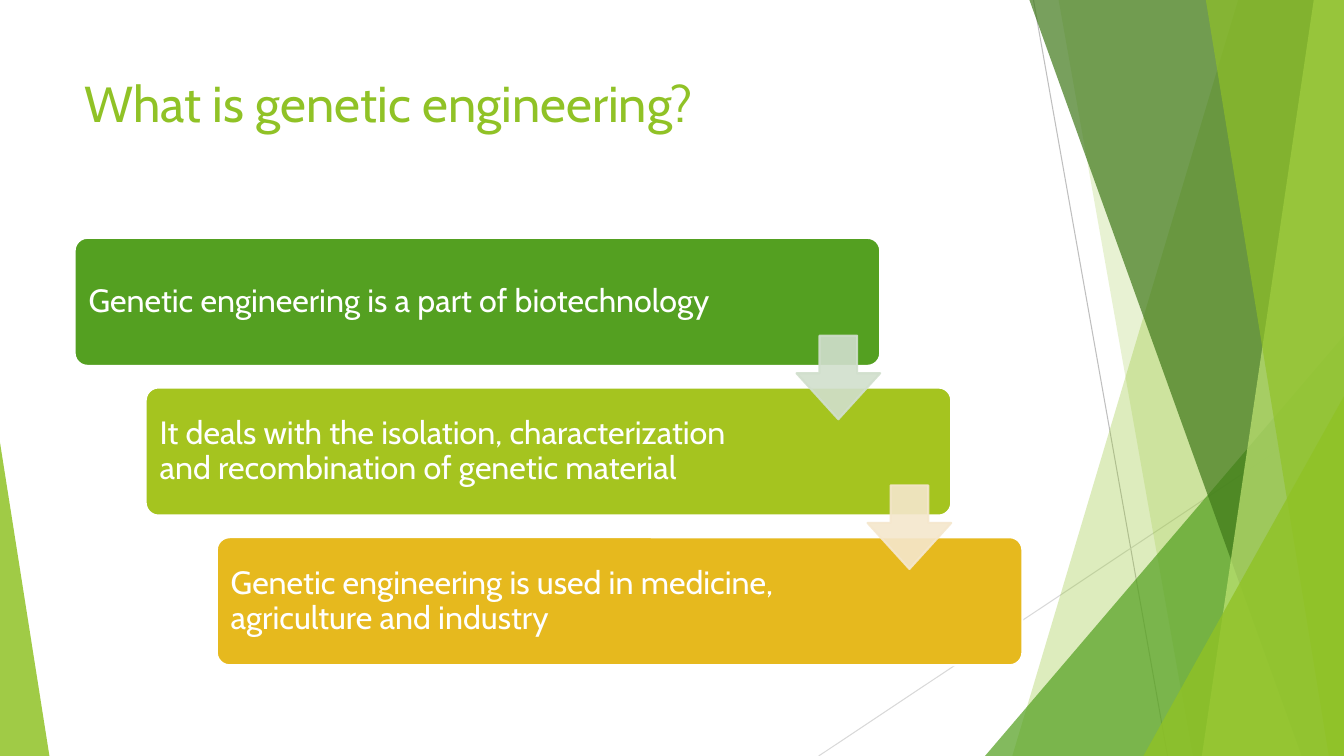
from dataclasses import dataclass

from lxml import etree
from pptx import Presentation
from pptx import util as u
from pptx.dml.color import RGBColor
from pptx.enum import shapes, text
from pptx.oxml.ns import qn


@dataclass(frozen=True)
class Theme:
    font: str = "Cabin"
    title_size: int = 36
    card_size: int = 23
    white: str = "FFFFFF"
    lime: str = "90C226"
    green: str = "54A021"
    dark_green: str = "3F7819"
    pale_lime: str = "C0E474"
    olive: str = "A5C41F"
    gold: str = "E6B91E"
    pale_green: str = "D1DFCD"
    pale_gold: str = "F5E7CD"
    grey: str = "BFBFBF"
    light_grey: str = "D9D9D9"


THEME = Theme()
WIDTH, HEIGHT = 13.33, 7.5
SHAPE = shapes.MSO_SHAPE

STEPS = [
    ("Genetic engineering is a part of biotechnology", THEME.green, 6.62),
    ("It deals with the isolation, characterization and recombination of genetic material",
     THEME.olive, 6.38),
    ("Genetic engineering is used in medicine, agriculture and industry", THEME.gold, 6.38),
]
ARROW_COLORS = [THEME.pale_green, THEME.pale_gold]


def inches(*lengths):
    return [u.Inches(length) for length in lengths]


def set_color(paint, color, opacity=100):
    """Make a fill solid, with opacity in percent."""
    paint.solid()
    paint.fore_color.rgb = RGBColor.from_string(color)
    if opacity < 100:
        color_element = paint._xPr.find(qn("a:solidFill"))[0]
        etree.SubElement(color_element, qn("a:alpha"), val=str(opacity * 1000))


def style_shape(shape, color, opacity=100, line=None, line_opacity=100):
    shape.shadow.inherit = False
    set_color(shape.fill, color, opacity)
    if line:
        shape.line.width = u.Pt(1.5)
        set_color(shape.line.fill, line, line_opacity)
    else:
        shape.line.fill.background()


def add_preset(page, kind, box, adjustments, color, **style):
    shape = page.shapes.add_shape(kind, *inches(*box))
    for index, value in enumerate(adjustments):
        shape.adjustments[index] = value
    style_shape(shape, color, **style)


def add_text(page, box, content, *, size, color, inset=0.1,
             anchor=text.MSO_ANCHOR.TOP, spacing=1.0):
    frame = page.shapes.add_textbox(*inches(*box)).text_frame
    frame.word_wrap = True
    frame.vertical_anchor = anchor
    frame.margin_left = frame.margin_right = u.Inches(0.1)
    frame.margin_top = frame.margin_bottom = u.Inches(inset)
    para = frame.paragraphs[0]
    para.line_spacing = spacing
    span = para.add_run()
    span.text = content
    span.font.name = THEME.font
    span.font.size = u.Pt(size)
    span.font.color.rgb = RGBColor.from_string(color)


def add_line(page, start, end, color):
    line = page.shapes.add_connector(
        shapes.MSO_CONNECTOR.STRAIGHT, *inches(*start, *end))
    line.line.width = u.Pt(0.75)
    set_color(line.line.fill, color)
    etree.SubElement(line._element.spPr, qn("a:effectLst"))


def add_band(page, box, top_x, bottom_x, color, opacity):
    """Draw a band from a slanted left edge to the right side of the box."""
    left, top, width, height = box
    right, bottom = left + width, top + height
    builder = page.shapes.build_freeform(*inches(top_x, top), scale=1.0)
    builder.add_line_segments(
        [inches(*point) for point in [(right, top), (right, bottom), (bottom_x, bottom)]])
    style_shape(builder.convert_to_shape(), color, opacity)


def add_corner(page, box, width, height, color, opacity, at_right=True):
    """Draw a right triangle in a bottom corner of the box."""
    left, top, box_width, box_height = box
    corner_left = left + box_width - width if at_right else left
    add_preset(page, SHAPE.ISOSCELES_TRIANGLE,
               (corner_left, top + box_height - height, width, height),
               [int(at_right)], color, opacity=opacity)


def add_backdrop(page, box):
    left, top, width, height = box
    right, bottom = left + width, top + height
    add_line(page, (left + 10.25, top), (left + 11.58, bottom), THEME.grey)
    add_line(page, (right, top + 4.03), (left + 8.12, bottom), THEME.light_grey)
    add_band(page, box, 12.28, 10.04, THEME.lime, 30)
    add_band(page, box, 10.5, 11.83, THEME.lime, 20)
    add_corner(page, box, 3.56, 4.17, THEME.green, 72)
    add_band(page, box, 10.21, 12.91, THEME.dark_green, 70)
    add_band(page, box, 13.03, 11.92, THEME.pale_lime, 70)
    add_band(page, box, 11.96, 13.18, THEME.lime, 65)
    add_corner(page, box, 1.99, 3.57, THEME.lime, 80)
    add_corner(page, box, 0.49, 3.11, THEME.lime, 85, at_right=False)


def add_staircase(page, box):
    """Place the cards from the top left to the bottom right of the box."""
    left, top, width, height = box
    card_width, card_height, arrow_size, pad = 7.99, 1.27, 0.83, 0.04
    step_x = (width - card_width) / (len(STEPS) - 1)
    step_y = (height - card_height) / (len(STEPS) - 1)
    for index, (content, color, text_width) in enumerate(STEPS):
        x, y = left + index * step_x, top + index * step_y
        add_preset(page, SHAPE.ROUNDED_RECTANGLE, (x, y, card_width, card_height),
                   [0.1], color, line=THEME.white)
        add_text(page, (x + pad, y + pad, text_width, card_height - 2 * pad), content,
                 size=THEME.card_size, color=THEME.white,
                 anchor=text.MSO_ANCHOR.MIDDLE, spacing=0.9)
    for index, color in enumerate(ARROW_COLORS):
        x = left + index * step_x + card_width - arrow_size
        y = top + index * step_y + 0.97
        add_preset(page, SHAPE.DOWN_ARROW, (x, y, arrow_size, arrow_size),
                   [0.45, 0.55], color, opacity=90, line=color, line_opacity=90)


def main():
    deck = Presentation()
    deck.slide_width, deck.slide_height = inches(WIDTH, HEIGHT)
    page = deck.slides.add_slide(deck.slide_layouts[6])
    add_backdrop(page, (0, 0, WIDTH, HEIGHT))
    add_text(page, (0.74, 0.67, 9.4, 1.44), "What is genetic engineering?",
             size=THEME.title_size, color=THEME.lime, inset=0.05)
    add_staircase(page, (0.74, 2.36, 9.4, 4.24))
    deck.save("out.pptx")


if __name__ == "__main__":
    main()
